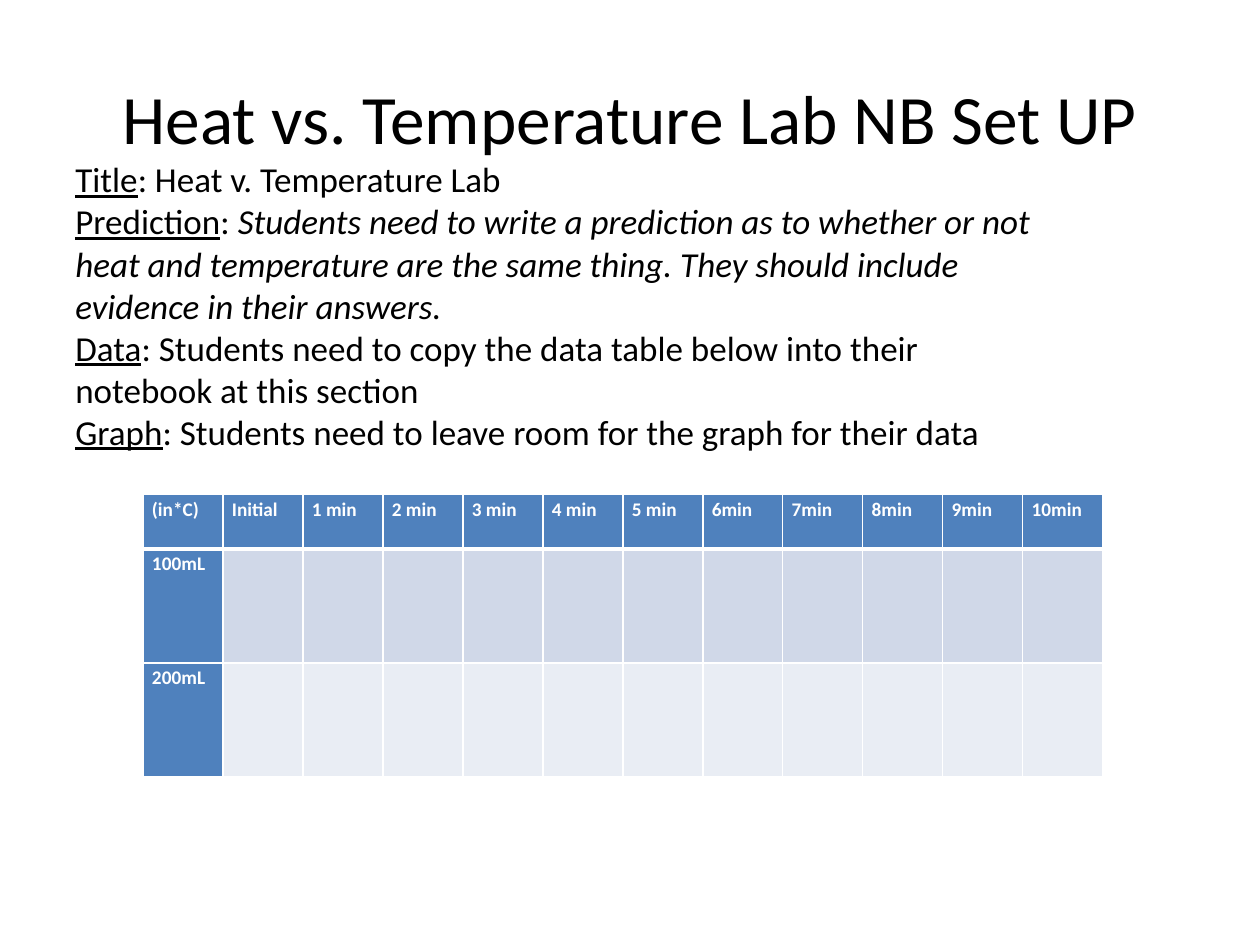
from dataclasses import dataclass

from lxml.etree import SubElement as Sub
from pptx import Presentation
from pptx.dml.color import RGBColor
from pptx.enum.text import MSO_ANCHOR as Anchor, MSO_AUTO_SIZE as Fit, PP_ALIGN as Align
from pptx.oxml.ns import qn
from pptx.util import Emu, Pt

DPI = 126
FONT = "Calibri"
BLACK, WHITE, BLUE = "000000", "FFFFFF", "4F81BD"


@dataclass
class Box:
    x: int
    y: int
    w: int
    h: int

    def emu(self) -> list[Emu]:
        return [px(n) for n in (self.x, self.y, self.w, self.h)]


@dataclass
class Note:
    head: str
    body: str
    slant: bool = False


@dataclass
class Row:
    texts: list[str]
    high: int
    fill: str
    rule: int = 1  # bottom border in points


NOTES = [
    Note("Title", "Heat v. Temperature Lab"),
    Note("Prediction", "Students need to write a prediction as to whether or not heat "
         "and temperature are the same thing. They should include evidence in their answers.",
         slant=True),
    Note("Data", "Students need to copy the data table below into their notebook at this section"),
    Note("Graph", "Students need to leave room for the graph for their data"),
]
TIMES = [f"{n} min" for n in range(1, 6)] + [f"{n}min" for n in range(6, 11)]
HEADS = ["(in*C)", "Initial"] + TIMES
BLANK = [""] * (len(HEADS) - 1)
ROWS = [
    Row(HEADS, 55, BLUE, rule=3),
    Row(["100mL"] + BLANK, 114, "D0D8E8"),
    Row(["200mL"] + BLANK, 114, "E9EDF4"),
]
COL = 80


def px(n: int) -> Emu:
    return Emu(round(n * 914400 / DPI))


def rgb(code: str) -> RGBColor:
    return RGBColor.from_string(code)


def style(font, size: float, color: str = BLACK, bold: bool = False) -> None:
    font.name, font.size, font.bold = FONT, Pt(size), bold
    font.color.rgb = rgb(color)


def draw_title(slide, text: str, box: Box) -> None:
    shape = slide.shapes.title
    shape.left, shape.top, shape.width, shape.height = box.emu()
    frame = shape.text_frame
    frame.text = text
    frame.auto_size = Fit.NONE
    frame.vertical_anchor = Anchor.MIDDLE
    para = frame.paragraphs[0]
    para.alignment = Align.CENTER
    style(para.runs[0].font, 39.6)


def draw_notes(slide, notes: list[Note], box: Box) -> None:
    frame = slide.shapes.add_textbox(*box.emu()).text_frame
    frame.word_wrap = True
    frame.auto_size = Fit.SHAPE_TO_FIT_TEXT
    frame.vertical_anchor = Anchor.MIDDLE
    for i, note in enumerate(notes):
        para = frame.add_paragraph() if i else frame.paragraphs[0]
        for text in (note.head, ": ", note.body):
            run = para.add_run()
            run.text = text
            style(run.font, 20)
        head, _, body = para.runs
        head.font.underline = True
        body.font.italic = note.slant


def edge(cell, side: str, width: int) -> None:
    props = cell._tc.get_or_add_tcPr()
    line = Sub(props, qn(f"a:ln{side}"), w=str(Pt(width)))
    fill = Sub(line, qn("a:solidFill"))
    Sub(fill, qn("a:srgbClr"), val=WHITE)


def draw_cell(cell, text: str, fill: str, top: int, base: int) -> None:
    cell.text = text
    cell.margin_left = cell.margin_right = px(9)
    cell.margin_top = cell.margin_bottom = 0
    para = cell.text_frame.paragraphs[0]
    para.line_spacing = 1.15
    style(para.font, 11, WHITE, bold=True)
    for run in para.runs:
        style(run.font, 11, WHITE, bold=True)
    # Borders come before the fill in the cell properties
    for side, width in (("L", 1), ("R", 1), ("T", top), ("B", base)):
        edge(cell, side, width)
    cell.fill.solid()
    cell.fill.fore_color.rgb = rgb(fill)


def draw_table(slide, rows: list[Row], x: int, y: int) -> None:
    wide = len(rows[0].texts)
    box = Box(x, y, COL * wide, sum(row.high for row in rows))
    table = slide.shapes.add_table(len(rows), wide, *box.emu()).table
    table.first_col = True
    for col in table.columns:
        col.width = px(COL)
    top = 1
    for r, row in enumerate(rows):
        table.rows[r].height = px(row.high)
        for c, text in enumerate(row.texts):
            fill = row.fill if c else BLUE
            draw_cell(table.cell(r, c), text, fill, top, row.rule)
        top = row.rule


def main() -> None:
    deck = Presentation()
    deck.slide_width, deck.slide_height = px(1260), px(945)
    slide = deck.slides.add_slide(deck.slide_layouts[5])
    # Heading
    draw_title(slide, "Heat vs. Temperature Lab NB Set UP", Box(63, 38, 1134, 158))
    # Data table
    draw_table(slide, ROWS, 143, 494)
    # Notebook sections
    draw_notes(slide, NOTES, Box(63, 150, 998, 310))
    deck.save("out.pptx")


if __name__ == "__main__":
    main()
